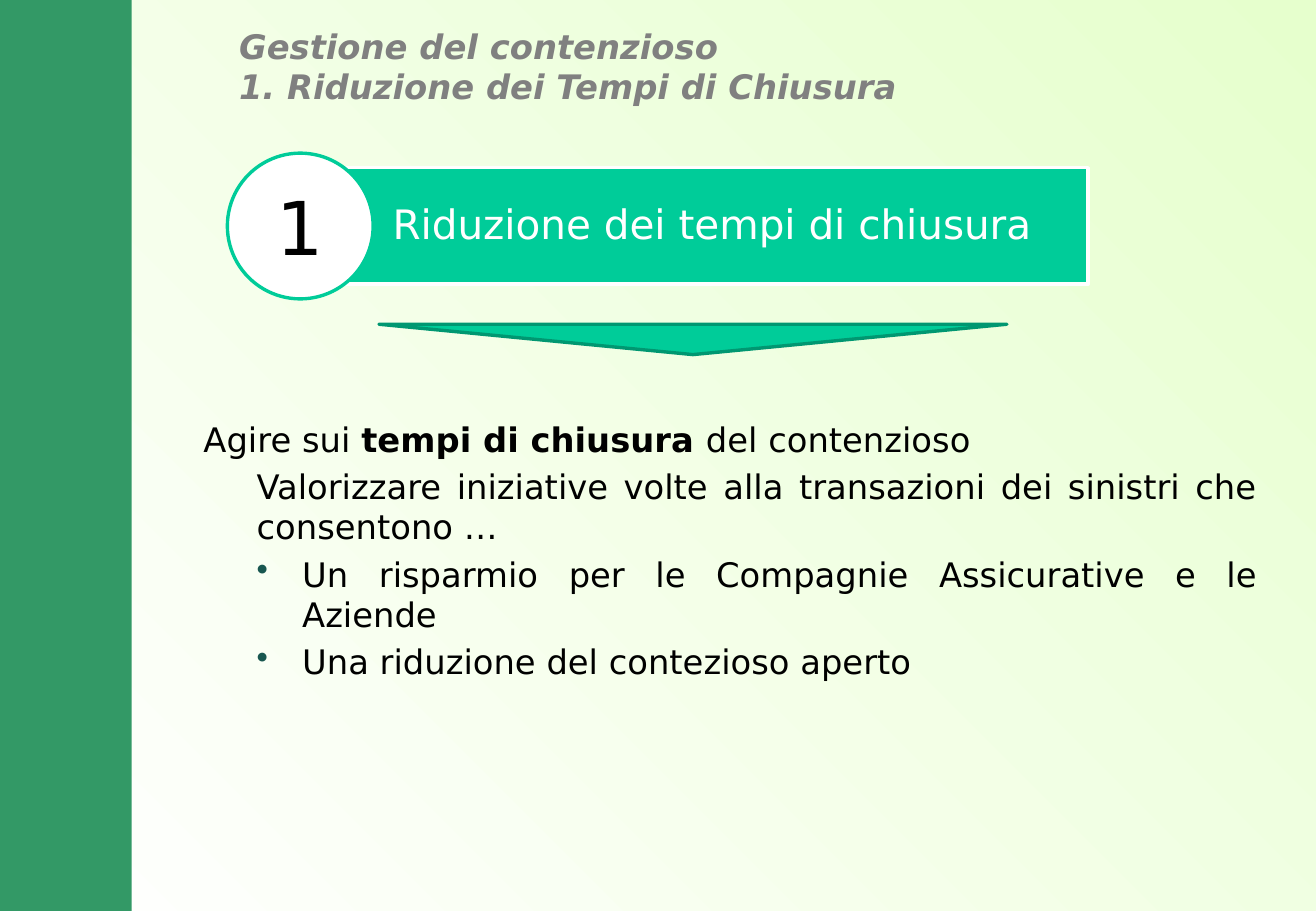
import dataclasses
import typing

import lxml.etree
import pptx
import pptx.dml.color
import pptx.enum.shapes
import pptx.enum.text
import pptx.oxml.ns
import pptx.util

Pt = pptx.util.Pt
RGBColor = pptx.dml.color.RGBColor
Shape = pptx.enum.shapes.MSO_SHAPE
Align = pptx.enum.text.PP_ALIGN

FONT = "DejaVu Sans"
WHITE = RGBColor(0xFF, 0xFF, 0xFF)
BLACK = RGBColor(0, 0, 0)
GREY = RGBColor(0x80, 0x80, 0x80)
PALE_GREEN = RGBColor(0xE6, 0xFF, 0xCD)
SIDE_GREEN = RGBColor(0x33, 0x99, 0x66)
TEAL = RGBColor(0x00, 0xCC, 0x99)
DARK_TEAL = RGBColor(0x00, 0x97, 0x71)
BULLET_GREEN = RGBColor(0x18, 0x57, 0x50)


@dataclasses.dataclass(frozen=True)
class Span:
    text: str
    bold: bool = False


@dataclasses.dataclass(frozen=True)
class Para:
    spans: tuple[Span, ...]
    formats: dict[str, typing.Any] = dataclasses.field(default_factory=dict)
    margin: float = 0
    indent: float = 0
    bullet: str = ""


@dataclasses.dataclass(frozen=True)
class Text:
    paras: tuple[Para, ...]
    font: dict[str, typing.Any]
    frame: dict[str, typing.Any]


@dataclasses.dataclass(frozen=True)
class Box:
    area: tuple[float, float, float, float]
    kind: typing.Any = None
    fill: RGBColor | None = None
    line: RGBColor | None = None
    rotation: float = 0
    text: Text | None = None


def apply(target: typing.Any, formats: dict[str, typing.Any]) -> None:
    for name, value in formats.items():
        setattr(target, name, value)


def font(size: float, **extra: typing.Any) -> dict[str, typing.Any]:
    return {"name": FONT, "size": Pt(size), **extra}


def frame(left: float, top: float, right: float, anchor: str) -> dict[str, typing.Any]:
    return {
        "word_wrap": True,
        "margin_left": Pt(left),
        "margin_top": Pt(top),
        "margin_right": Pt(right),
        "margin_bottom": Pt(top),
        "vertical_anchor": pptx.enum.text.MSO_ANCHOR[anchor],
    }


def add_bullet(properties: typing.Any, mark: str) -> None:
    qn = pptx.oxml.ns.qn
    colour = lxml.etree.SubElement(properties, qn("a:buClr"))
    lxml.etree.SubElement(colour, qn("a:srgbClr"), val=str(BULLET_GREEN))
    lxml.etree.SubElement(properties, qn("a:buChar"), char=mark)


def write_text(text_frame: typing.Any, text: Text) -> None:
    apply(text_frame, text.frame)
    for index, para in enumerate(text.paras):
        paragraph = text_frame.add_paragraph() if index else text_frame.paragraphs[0]
        apply(paragraph, para.formats)
        properties = paragraph._p.get_or_add_pPr()
        properties.set("marL", str(Pt(para.margin)))
        properties.set("indent", str(Pt(para.indent)))
        if para.bullet:
            add_bullet(properties, para.bullet)
        for span in para.spans:
            run = paragraph.add_run()
            run.text = span.text
            apply(run.font, {"bold": span.bold, **text.font})
            run.font.color.rgb = text.font["fill_colour"] if "fill_colour" in text.font else BLACK


def draw_box(page: typing.Any, box: Box) -> None:
    area = [Pt(length) for length in box.area]
    if box.kind is None:
        shape = page.shapes.add_textbox(*area)
    else:
        shape = page.shapes.add_shape(box.kind, *area)
        shape.shadow.inherit = False
        shape.rotation = box.rotation
        shape.fill.solid()
        shape.fill.fore_color.rgb = box.fill
        if box.line is None:
            shape.line.fill.background()
        else:
            shape.line.color.rgb = box.line
            shape.line.width = Pt(2)
    if box.text:
        write_text(shape.text_frame, box.text)


JUSTIFIED = {"alignment": Align.JUSTIFY}
SPACED = {**JUSTIFIED, "space_before": Pt(4)}

TITLE = Text(
    (
        Para((Span("Gestione del contenzioso"),)),
        Para((Span("1. Riduzione dei Tempi di Chiusura"),)),
    ),
    font(20, bold=True, italic=True, fill_colour=GREY),
    frame(7.2, 0, 7.2, "TOP"),
)
BANNER = Text(
    (Para((Span("Riduzione dei tempi di chiusura"),), {"alignment": Align.LEFT, "line_spacing": 0.9}),),
    font(24, fill_colour=WHITE),
    frame(54.7, 5, 5, "MIDDLE"),
)
NUMBER = Text(
    (Para((Span("1"),), {"alignment": Align.CENTER}),),
    font(44),
    frame(0, 0, 0, "MIDDLE"),
)
BODY = Text(
    (
        Para(
            (Span("Agire sui "), Span("tempi di chiusura ", True), Span("del contenzioso")),
            JUSTIFIED,
            31.5,
        ),
        Para(
            (Span("Valorizzare iniziative volte alla transazioni dei sinistri che consentono …"),),
            SPACED,
            63,
        ),
        Para((Span("Un risparmio per le Compagnie Assicurative e le Aziende"),), SPACED, 90, -27, "•"),
        Para((Span("Una riduzione del contezioso aperto"),), SPACED, 90, -27, "•"),
    ),
    font(20),
    frame(7.2, 0, 7.2, "TOP"),
)

BOXES = (
    Box((0, 0, 78, 540), Shape.RECTANGLE, SIDE_GREEN),
    Box((82, 248, 670.3, 160), text=BODY),
    Box((134.6, 15, 617.8, 48), text=TITLE),
    Box((178, 99.4, 467, 69), Shape.RECTANGLE, TEAL, WHITE, text=BANNER),
    Box((134.8, 90.8, 86.4, 86.4), Shape.OVAL, WHITE, TEAL, text=NUMBER),
    Box((224.6, 192.2, 372.2, 18), Shape.ISOSCELES_TRIANGLE, TEAL, DARK_TEAL, 180),
)


def main() -> None:
    deck = pptx.Presentation()
    apply(deck, {"slide_width": Pt(780), "slide_height": Pt(540)})
    page = deck.slides.add_slide(deck.slide_layouts[6])
    backdrop = page.background.fill
    backdrop.gradient()
    backdrop.gradient_angle = 45
    for stop, colour in zip(backdrop.gradient_stops, (WHITE, PALE_GREEN)):
        stop.color.rgb = colour
    for box in BOXES:
        draw_box(page, box)
    deck.save("out.pptx")


if __name__ == "__main__":
    main()
